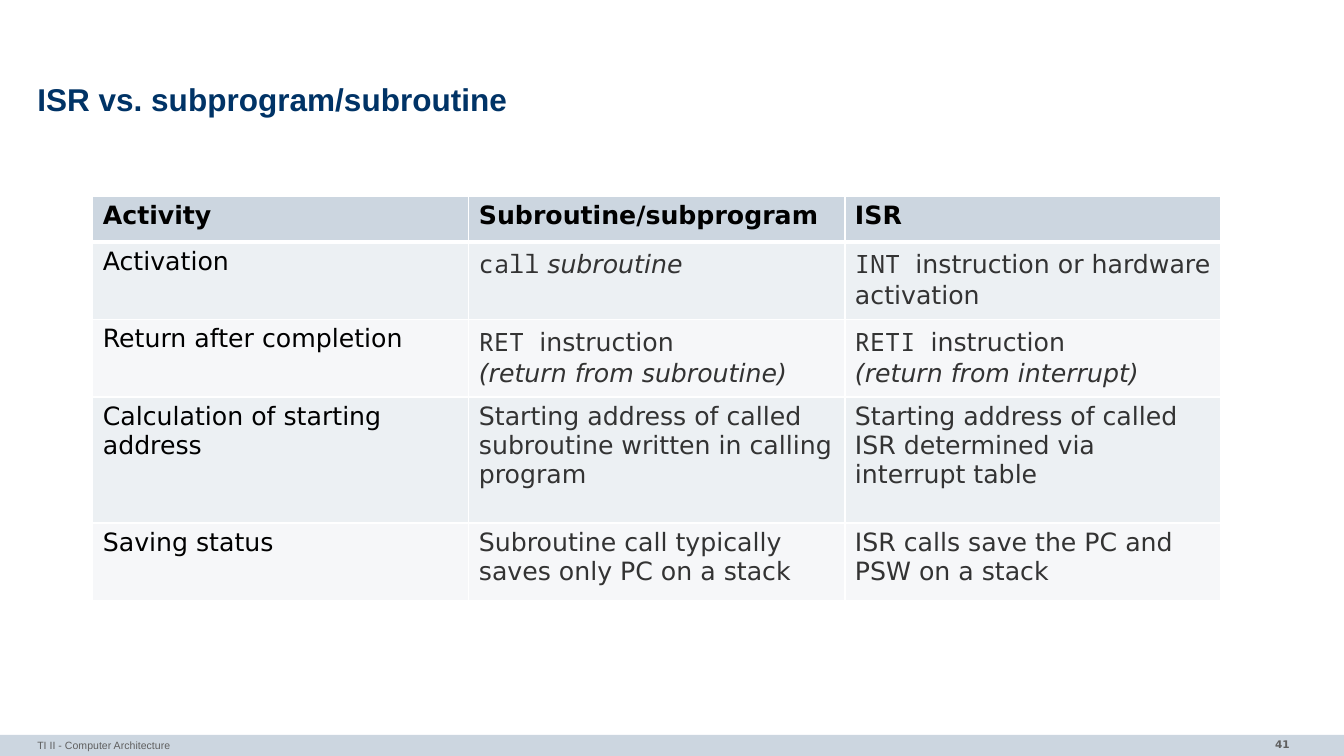
from lxml import etree
from pptx import Presentation
from pptx.dml.color import RGBColor
from pptx.enum.shapes import MSO_SHAPE
from pptx.enum.text import MSO_ANCHOR, PP_ALIGN
from pptx.oxml.ns import qn
from pptx.util import Inches, Pt

LEFT, RIGHT = PP_ALIGN.LEFT, PP_ALIGN.RIGHT
MIDDLE = MSO_ANCHOR.MIDDLE
RECTANGLE = MSO_SHAPE.RECTANGLE

TITLE = "ISR vs. subprogram/subroutine"
FOOTER = "TI II - Computer Architecture"
PAGE_NUMBER = "41"

# Each cell is a list of paragraphs; each paragraph is a list of (text, style).
HEADER = [[[(text, "header")]] for text in ("Activity", "Subroutine/subprogram", "ISR")]
ROWS = [
    HEADER,
    [
        [[("Activation", "activity")]],
        [[("call", "code"), (" subroutine", "italic")]],
        [[("INT ", "code"), ("instruction or hardware activation", "plain")]],
    ],
    [
        [[("Return after completion", "activity")]],
        [[("RET ", "code"), ("instruction", "plain")], [("(return from subroutine)", "italic")]],
        [[("RETI ", "code"), ("instruction", "plain")], [("(return from interrupt)", "italic")]],
    ],
    [
        [[("Calculation of starting address", "activity")]],
        [[("Starting address of called subroutine written in calling program", "plain")]],
        [[("Starting address of called ISR determined via interrupt table", "plain")]],
    ],
    [
        [[("Saving status", "activity")]],
        [[("Subroutine call typically saves only PC on a stack", "plain")]],
        [[("ISR calls save the PC and PSW on a stack", "plain")]],
    ],
]
ROW_HEIGHTS = [0.45, 0.77, 0.77, 1.25, 0.77]
COLUMN_WIDTH = 3.73

COLORS = {
    "navy": "003366", "bar": "CCD6E0", "odd": "ECF0F3", "even": "F6F7F9",
    "black": "000000", "text": "333333", "gray": "5F5F5F", "white": "FFFFFF",
}
SANS, MONO, ARIAL = "DejaVu Sans", "Noto Sans Mono", "Arial"
STYLES = {
    "title": {"name": ARIAL, "size": Pt(22.5), "bold": True, "color": "navy"},
    "footer": {"name": ARIAL, "size": Pt(7.5), "color": "gray"},
    "number": {"name": SANS, "size": Pt(7.5), "bold": True, "color": "gray"},
    "header": {"name": SANS, "size": Pt(18), "bold": True, "color": "black"},
    "activity": {"name": SANS, "size": Pt(18), "bold": False, "color": "black"},
    "plain": {"name": SANS, "size": Pt(18), "bold": False, "color": "text"},
    "italic": {"name": SANS, "size": Pt(18), "bold": False, "italic": True, "color": "text"},
    "code": {"name": MONO, "size": Pt(18), "bold": False, "color": "text"},
}


def rgb(name):
    return RGBColor.from_string(COLORS[name])


def add_span(para, text, style):
    span = para.add_run()
    span.text = text
    for key, value in STYLES[style].items():
        if key == "color":
            span.font.color.rgb = rgb(value)
        else:
            setattr(span.font, key, value)


def add_label(page, place, text, style, align, side_margin):
    box = page.shapes.add_textbox(*map(Inches, place))
    frame = box.text_frame
    frame.word_wrap = True
    frame.margin_left = frame.margin_right = Inches(side_margin)
    para = frame.paragraphs[0]
    para.alignment = align
    add_span(para, text, style)


def set_borders(cell, widths):
    """Draw white edges, with widths in points for left, right, top, bottom."""
    properties = cell._tc.get_or_add_tcPr()
    for index, (edge, width) in enumerate(zip("LRTB", widths)):
        line = etree.Element(qn("a:ln" + edge), w=str(Pt(width)))
        fill = etree.SubElement(line, qn("a:solidFill"))
        etree.SubElement(fill, qn("a:srgbClr"), val=COLORS["white"])
        properties.insert(index, line)


def fill_cell(cell, paragraphs, row):
    cell.fill.solid()
    cell.fill.fore_color.rgb = rgb("bar" if row == 0 else "odd" if row % 2 else "even")
    set_borders(cell, (1, 1, 3 if row == 1 else 1, 3 if row == 0 else 1))
    for index, spans in enumerate(paragraphs):
        frame = cell.text_frame
        para = frame.add_paragraph() if index else frame.paragraphs[0]
        para.alignment = LEFT
        for text, style in spans:
            add_span(para, text, style)


def add_comparison(page):
    columns = len(HEADER)
    place = (0.92, 1.95, columns * COLUMN_WIDTH, sum(ROW_HEIGHTS))
    table = page.shapes.add_table(len(ROWS), columns, *map(Inches, place)).table
    for column in table.columns:
        column.width = Inches(COLUMN_WIDTH)
    for row, (cells, height) in enumerate(zip(ROWS, ROW_HEIGHTS)):
        table.rows[row].height = Inches(height)
        for column, paragraphs in enumerate(cells):
            fill_cell(table.cell(row, column), paragraphs, row)


def add_title(page):
    title = page.shapes.title
    title.left, title.top, title.width, title.height = map(Inches, (0.37, 0.78, 12.6, 0.47))
    frame = title.text_frame
    frame.vertical_anchor = MIDDLE
    for side in ("left", "right", "top", "bottom"):
        setattr(frame, "margin_" + side, 0)
    para = frame.paragraphs[0]
    para.alignment = LEFT
    para.line_spacing = 0.85
    add_span(para, TITLE, "title")


def add_footer(page):
    bar = page.shapes.add_shape(RECTANGLE, *map(Inches, (0, 7.29, 13.33, 0.21)))
    bar.shadow.inherit = False
    bar.fill.solid()
    bar.fill.fore_color.rgb = rgb("bar")
    bar.line.fill.background()
    add_label(page, (11.1, 7.27, 1.79, 0.26), PAGE_NUMBER, "number", RIGHT, 0.1)
    add_label(page, (0.37, 7.28, 8.72, 0.25), FOOTER, "footer", LEFT, 0)


def main():
    deck = Presentation()
    deck.slide_width, deck.slide_height = Inches(13.33), Inches(7.5)
    page = deck.slides.add_slide(deck.slide_layouts.get_by_name("Title Only"))
    add_footer(page)
    add_title(page)
    add_comparison(page)
    deck.save("out.pptx")


if __name__ == "__main__":
    main()
